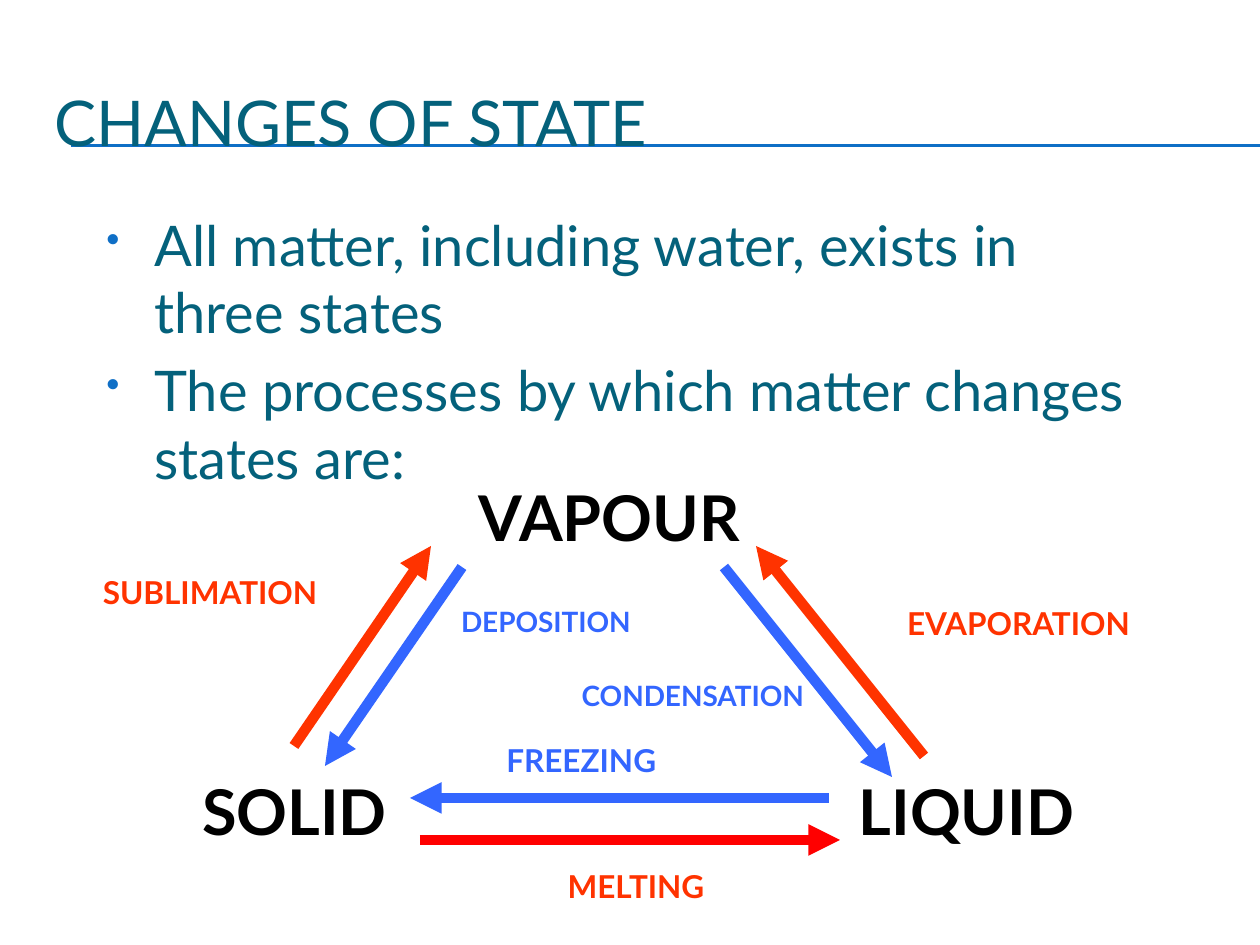
"""Build a slide on the changes of state of matter."""
from lxml.etree import SubElement
from pptx import Presentation
from pptx.dml.color import RGBColor
from pptx.enum.shapes import MSO_CONNECTOR
from pptx.enum.text import MSO_ANCHOR, MSO_AUTO_SIZE, PP_ALIGN
from pptx.oxml.ns import qn
from pptx.util import Pt

SCALE = 914400 / 126
FONT = "Lato"
COLORS = {"teal": "04617B", "rule": "0F6FC6", "state": "000000",
          "melt": "FF0000", "warm": "FF3300", "cool": "3366FF"}

TITLE = ("CHANGES OF STATE", (42, 63, 1197, 116))
BODY_BOX = (94, 204, 1071, 635)
POINTS = ["All matter, including water, exists in three states",
          "The processes by which matter changes states are:"]
HANG = 48
RULES = [(71, 145, 1260, 145), (71, 146, 1260, 146)]
STATES = [("VAPOUR", 431, 472), ("SOLID", 116, 766), ("LIQUID", 788, 766)]
STATE_SIZE = (357, 88)
PROCESSES = [
    ("MELTING", 18, "center", "warm", (494, 861, 284, 63), "melt", (420, 840, 840, 840)),
    ("EVAPORATION", 18, "center", "warm", (840, 598, 357, 63), "warm", (924, 756, 756, 546)),
    ("SUBLIMATION", 18, "center", "warm", (42, 567, 336, 63), "warm", (294, 746, 431, 546)),
    ("FREEZING", 18, "left", "cool", (494, 735, 252, 63), "cool", (829, 798, 410, 798)),
    ("DEPOSITION", 16, "center", "cool", (420, 598, 252, 47), "cool", (462, 567, 325, 766)),
    ("CONDENSATION", 16, "center", "cool", (567, 672, 252, 47), "cool", (724, 567, 892, 777)),
]
ALIGN = {"left": PP_ALIGN.LEFT, "center": PP_ALIGN.CENTER}


def emu(px):
    return round(px * SCALE)


def apply(target, values):
    for name, value in values.items():
        setattr(target, name, value)


def add_text(shapes, lines, box, size, color, bold=False, align="left", **frame_format):
    frame = shapes.add_textbox(*map(emu, box)).text_frame
    apply(frame, {"word_wrap": True, **frame_format})
    frame.text = "\n".join(lines)
    for paragraph in frame.paragraphs:
        paragraph.alignment = ALIGN[align]
        font = paragraph.runs[0].font
        apply(font, {"name": FONT, "size": Pt(size), "bold": bold})
        font.color.rgb = RGBColor.from_string(COLORS[color])
    return frame


def add_line(shapes, ends, color, width, arrow=False):
    line = shapes.add_connector(MSO_CONNECTOR.STRAIGHT, *map(emu, ends))
    line.line.width = Pt(width)
    line.line.color.rgb = RGBColor.from_string(COLORS[color])
    if arrow:
        SubElement(line.line._get_or_add_ln(), qn("a:tailEnd"), type="triangle")
    SubElement(line._element.spPr, qn("a:effectLst"))


def add_bullet(paragraph):
    props = paragraph._p.get_or_add_pPr()
    for name, value in {"marL": emu(HANG), "indent": -emu(HANG)}.items():
        props.set(name, str(value))
    before = SubElement(props, qn("a:spcBef"))
    SubElement(before, qn("a:spcPct"), val="20000")
    bullet_color = SubElement(props, qn("a:buClr"))
    SubElement(bullet_color, qn("a:srgbClr"), val=COLORS["rule"])
    SubElement(props, qn("a:buSzPct"), val="70000")
    SubElement(props, qn("a:buChar"), char="•")


def main():
    deck = Presentation()
    apply(deck, {"slide_width": emu(1260), "slide_height": emu(945)})
    shapes = deck.slides.add_slide(deck.slide_layouts[6]).shapes
    grow = {"auto_size": MSO_AUTO_SIZE.SHAPE_TO_FIT_TEXT}

    for rule in RULES:
        add_line(shapes, rule, "rule", 0.75)
    for state, left, top in STATES:
        add_text(shapes, [state], (left, top, *STATE_SIZE), 36, "state", True, "center", **grow)
    title, title_box = TITLE
    add_text(shapes, [title], title_box, 36, "teal", vertical_anchor=MSO_ANCHOR.MIDDLE)
    body = add_text(shapes, POINTS, BODY_BOX, 32, "teal")
    for point in body.paragraphs:
        add_bullet(point)

    for process, size, align, color, box, arrow_color, ends in PROCESSES:
        group = shapes.add_group_shape().shapes
        add_line(group, ends, arrow_color, 6, arrow=True)
        add_text(group, [process], box, size, color, True, align, **grow)

    deck.save("out.pptx")


if __name__ == "__main__":
    main()
